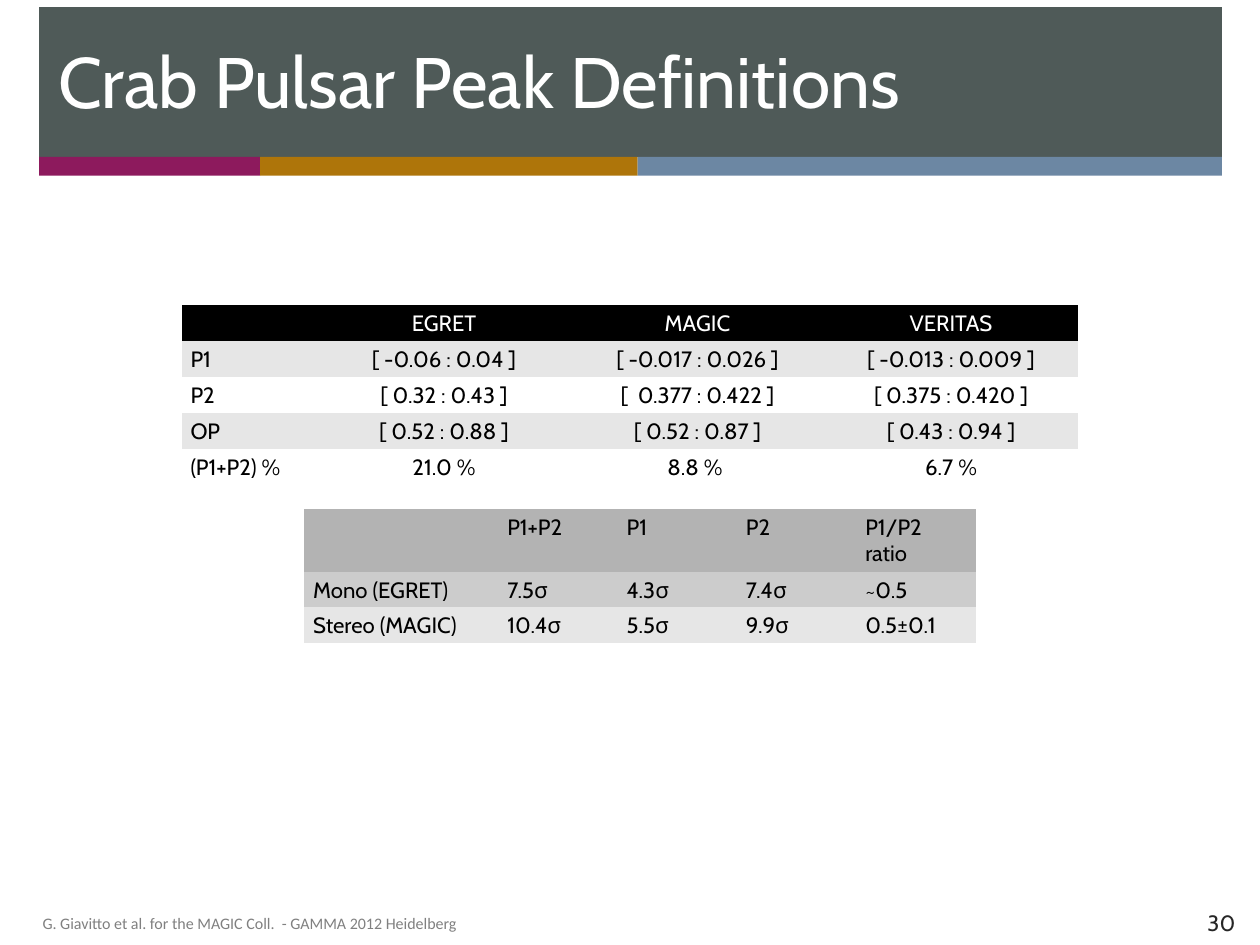
import pptx
import pptx.dml.color
import pptx.enum.shapes
import pptx.enum.text
import pptx.oxml
import pptx.oxml.ns
import pptx.util

Pt = pptx.util.Pt
RGBColor = pptx.dml.color.RGBColor
ALIGN = pptx.enum.text.PP_ALIGN
ANCHOR = pptx.enum.text.MSO_ANCHOR

SLATE = RGBColor(0x4F, 0x5A, 0x58)
PLUM = RGBColor(0x8D, 0x1A, 0x5D)
OCHRE = RGBColor(0xAE, 0x75, 0x0A)
STEEL = RGBColor(0x6C, 0x87, 0xA3)
BLACK = RGBColor(0x00, 0x00, 0x00)
WHITE = RGBColor(0xFF, 0xFF, 0xFF)
INK = RGBColor(0x26, 0x26, 0x26)
GRAY = RGBColor(0x80, 0x80, 0x80)
DARK_ROW = RGBColor(0xB3, 0xB3, 0xB3)
MID_ROW = RGBColor(0xCC, 0xCC, 0xCC)
LIGHT_ROW = RGBColor(0xE6, 0xE6, 0xE6)

PEAK_ROWS = [
    ("", "EGRET", "MAGIC", "VERITAS"),
    ("P1", "[ -0.06 : 0.04 ]", "[ -0.017 : 0.026 ]", "[ -0.013 : 0.009 ]"),
    ("P2", "[ 0.32 : 0.43 ]", "[  0.377 : 0.422 ]", "[ 0.375 : 0.420 ]"),
    ("OP", "[ 0.52 : 0.88 ]", "[ 0.52 : 0.87 ]", "[ 0.43 : 0.94 ]"),
    ("(P1+P2) %", "21.0 %", "8.8 % ", "6.7 %"),
]
SIGNIFICANCE_ROWS = [
    ("", "P1+P2", "P1", "P2", "P1/P2 ratio"),
    ("Mono (EGRET)", "7.5σ", "4.3σ", "7.4σ", "~0.5"),
    ("Stereo (MAGIC)", "10.4σ", "5.5σ", "9.9σ", "0.5±0.1"),
]


def add_run(p, text, size, color, font="Cabin"):
    r = p.add_run()
    r.text = text
    r.font.size = Pt(size)
    r.font.name = font
    r.font.color.rgb = color


def set_margins(target, side, top, bottom):
    target.margin_left = target.margin_right = Pt(side)
    target.margin_top, target.margin_bottom = Pt(top), Pt(bottom)


def add_bar(s, x, y, w, h, color):
    sp = s.shapes.add_shape(pptx.enum.shapes.MSO_SHAPE.RECTANGLE,
                            Pt(x), Pt(y), Pt(w), Pt(h))
    sp.shadow.inherit = False
    sp.fill.solid()
    sp.fill.fore_color.rgb = color
    sp.line.fill.background()


def add_text(s, x, y, w, h, text, size, color, font="Cabin",
             align=ALIGN.LEFT, inset=(2.9, 2.9)):
    tf = s.shapes.add_textbox(Pt(x), Pt(y), Pt(w), Pt(h)).text_frame
    tf.word_wrap = True
    tf.vertical_anchor = ANCHOR.MIDDLE
    side, top = inset
    set_margins(tf, side, top, top)
    p = tf.paragraphs[0]
    p.alignment = align
    add_run(p, text, size, color, font)


def add_header(s, x, y, w, h):
    """Title band with a three-coloured strip along its bottom."""
    strip = 15.1
    band = h - strip
    add_bar(s, x, y, w, band, SLATE)
    left = x
    for share, color in ((0.187, PLUM), (0.319, OCHRE), (0.494, STEEL)):
        add_bar(s, left, y + band, w * share, strip, color)
        left += w * share
    add_text(s, x + 13, y + 10.8, w - 26, 97.2,
             "Crab Pulsar Peak Definitions", 58, WHITE)


def set_thin_borders(cell):
    props = cell._tc.get_or_add_tcPr()
    for i, side in enumerate(("lnL", "lnR", "lnT", "lnB")):
        line = pptx.oxml.parse_xml(
            f'<a:{side} {pptx.oxml.ns.nsdecls("a")} w="{Pt(0.03)}"><a:solidFill>'
            f'<a:srgbClr val="{WHITE}"/></a:solidFill></a:{side}>')
        props.insert(i, line)


def add_grid(s, x, y, rows, widths, heights, fills, spacing, top, value_align):
    """Table whose first column is left-aligned labels."""
    t = s.shapes.add_table(len(rows), len(widths), Pt(x), Pt(y),
                           Pt(sum(widths)), Pt(sum(heights))).table
    for column, width in zip(t.columns, widths):
        column.width = Pt(width)
    for i, (texts, height, fill) in enumerate(zip(rows, heights, fills)):
        t.rows[i].height = Pt(height)
        for j, text in enumerate(texts):
            cell = t.cell(i, j)
            cell.fill.solid()
            cell.fill.fore_color.rgb = fill
            set_thin_borders(cell)
            set_margins(cell, 7.2, top, 3.6)
            if text:
                p = cell.text_frame.paragraphs[0]
                p.alignment = value_align if j else ALIGN.LEFT
                p.line_spacing = spacing
                add_run(p, text, 18, WHITE if fill == BLACK else BLACK)
                p.runs[0].font.bold = False


def add_footer(s, x, y, w, h):
    add_text(s, x, y + 7.2, 687, 23,
             "G. Giavitto et al. for the MAGIC Coll.  - GAMMA 2012 Heidelberg",
             13, GRAY, "Calibri")
    number = 54.7
    add_text(s, x + w - number, y, number, h, "30", 18, INK,
             align=ALIGN.RIGHT, inset=(7.2, 3.6))


def main():
    prs = pptx.Presentation()
    prs.slide_width, prs.slide_height = Pt(1023.84), Pt(767.52)
    s = prs.slides.add_slide(prs.slide_layouts[6])
    add_header(s, 31.7, 5.8, 961.2, 136.8)
    add_footer(s, 31.7, 730.8, 979.2, 37.4)
    add_grid(s, 147.6, 247.7, PEAK_ROWS, [110.2] + [206] * 3, [29.2] * 5,
             [BLACK, LIGHT_ROW, WHITE, LIGHT_ROW, WHITE],
             0.97, 4.3, ALIGN.CENTER)
    add_grid(s, 247.3, 413.8, SIGNIFICANCE_ROWS, [157.7] + [97] * 4,
             [50.4, 28.8, 28.8], [DARK_ROW, MID_ROW, LIGHT_ROW],
             0.94, 5, ALIGN.LEFT)
    prs.save("out.pptx")


if __name__ == "__main__":
    main()
